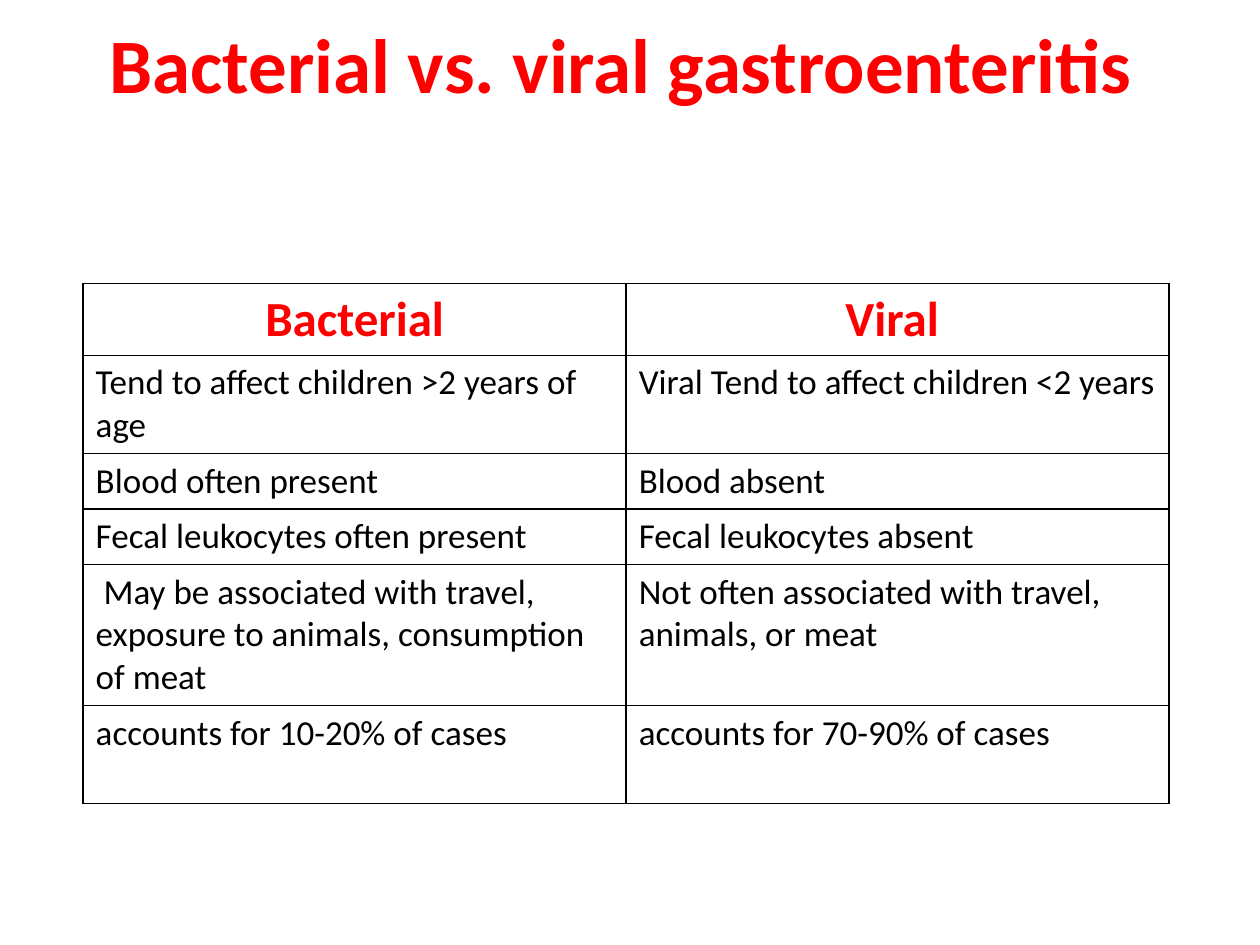
import dataclasses

import pptx
import pptx.dml.color
import pptx.enum.text
import pptx.oxml
import pptx.oxml.ns
import pptx.util


@dataclasses.dataclass(frozen=True)
class Theme:
    font: str = "Calibri"
    accent: str = "FF0000"
    text: str = "000000"
    border: str = "000000"
    border_points: float = 1
    title_size: int = 44
    header_size: int = 28
    body_size: int = 20


THEME = Theme()
CENTER = pptx.enum.text.PP_ALIGN.CENTER
LEFT = pptx.enum.text.PP_ALIGN.LEFT

SLIDE_WIDTH = pptx.util.Inches(10)
SLIDE_HEIGHT = pptx.util.Inches(7.5)

# Row heights in inches, then the two cells of each row
COMPARISON = [
    (0.57, "Bacterial", "Viral "),
    (0.78, "Tend to affect children >2 years of age",
     "Viral Tend to affect children <2 years"),
    (0.44, "Blood often present", "Blood absent"),
    (0.44, "Fecal leukocytes often present", "Fecal leukocytes absent"),
    (1.12, " May be associated with travel, exposure to animals, "
           "consumption of meat",
     "Not often associated with travel, animals, or meat"),
    (0.78, "accounts for 10-20% of cases", "accounts for 70-90% of cases"),
]


def across(share):
    return round(SLIDE_WIDTH * share)


def down(share):
    return round(SLIDE_HEIGHT * share)


def add_run(paragraph, text, size, color, bold=False):
    run = paragraph.add_run()
    run.text = text
    run.font.name = THEME.font
    run.font.size = pptx.util.Pt(size)
    run.font.bold = bold
    run.font.color.rgb = pptx.dml.color.RGBColor.from_string(color)


def add_title(slide, text):
    shape = slide.shapes.add_textbox(
        across(0.069), down(0.007), across(0.862), down(0.132))
    frame = shape.text_frame
    frame.word_wrap = True
    frame.vertical_anchor = pptx.enum.text.MSO_ANCHOR.MIDDLE
    paragraph = frame.paragraphs[0]
    paragraph.alignment = CENTER
    paragraph.line_spacing = 0.9
    add_run(paragraph, text, THEME.title_size, THEME.accent, bold=True)


def set_borders(cell):
    properties = cell._tc.get_or_add_tcPr()
    width = pptx.util.Pt(THEME.border_points)
    # Border lines come before the fill in the cell properties
    for position, side in enumerate(("lnL", "lnR", "lnT", "lnB")):
        line = pptx.oxml.parse_xml(
            f'<a:{side} {pptx.oxml.ns.nsdecls("a")} w="{width}">'
            f'<a:solidFill><a:srgbClr val="{THEME.border}"/></a:solidFill>'
            f'</a:{side}>')
        properties.insert(position, line)


def fill_cell(cell, text, is_header):
    cell.fill.background()
    set_borders(cell)
    paragraph = cell.text_frame.paragraphs[0]
    paragraph.alignment = CENTER if is_header else LEFT
    size = THEME.header_size if is_header else THEME.body_size
    color = THEME.accent if is_header else THEME.text
    add_run(paragraph, text, size, color, bold=is_header)


def add_comparison(slide, rows):
    total_height = pptx.util.Inches(sum(height for height, *_ in rows))
    table = slide.shapes.add_table(
        len(rows), 2, across(0.066), down(0.3), across(0.862),
        total_height).table
    table.horz_banding = False
    for row_index, (height, *texts) in enumerate(rows):
        table.rows[row_index].height = pptx.util.Inches(height)
        for column_index, text in enumerate(texts):
            fill_cell(table.cell(row_index, column_index), text,
                      is_header=row_index == 0)


def main():
    presentation = pptx.Presentation()
    presentation.slide_width = SLIDE_WIDTH
    presentation.slide_height = SLIDE_HEIGHT
    slide = presentation.slides.add_slide(presentation.slide_layouts[6])

    # Heading
    add_title(slide, "Bacterial vs. viral gastroenteritis ")

    # Side-by-side comparison
    add_comparison(slide, COMPARISON)

    presentation.save("out.pptx")


if __name__ == "__main__":
    main()
